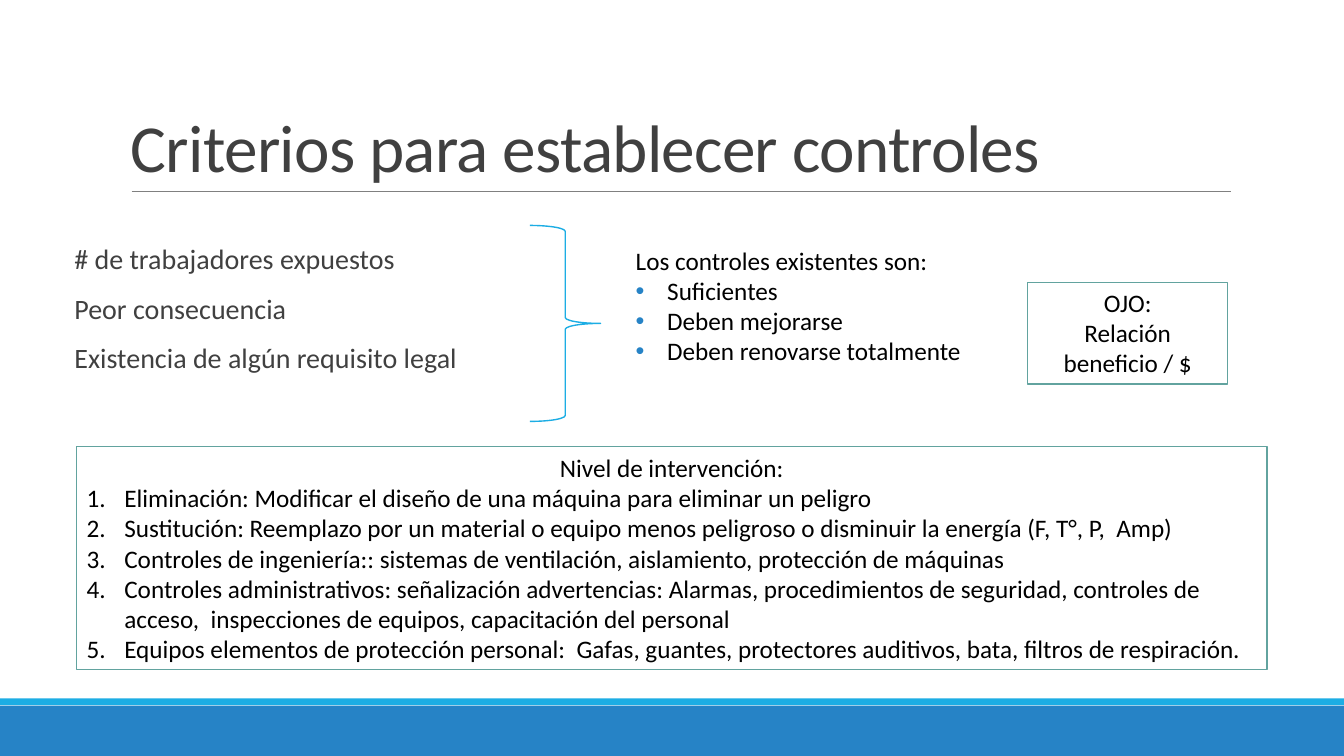
from lxml.etree import SubElement
from pptx import Presentation
from pptx.dml.color import RGBColor
from pptx.enum.shapes import MSO_CONNECTOR, MSO_SHAPE
from pptx.enum.text import MSO_ANCHOR, PP_ALIGN
from pptx.oxml.ns import qn
from pptx.util import Pt

FONT = "Calibri"
BLACK = RGBColor(0x00, 0x00, 0x00)
WHITE = RGBColor(0xFF, 0xFF, 0xFF)
DARK = RGBColor(0x40, 0x40, 0x40)
GRAY = RGBColor(0x80, 0x80, 0x80)
BLUE = RGBColor(0x26, 0x83, 0xC6)
CYAN = RGBColor(0x1C, 0xAD, 0xE4)
TEAL = RGBColor(0x62, 0xA3, 0x9F)

CRITERIA = [
    "# de trabajadores expuestos",
    "Peor consecuencia",
    "Existencia de algún requisito legal",
]
CONTROL_STATES = ["Suficientes", "Deben mejorarse", "Deben renovarse totalmente"]
INTERVENTION_LEVELS = [
    "Eliminación: Modificar el diseño de una máquina para eliminar un peligro",
    "Sustitución: Reemplazo por un material o equipo menos peligroso o "
    "disminuir la energía (F, T°, P,  Amp)",
    "Controles de ingeniería:: sistemas de ventilación, aislamiento, "
    "protección de máquinas",
    "Controles administrativos: señalización advertencias: Alarmas, "
    "procedimientos de seguridad, controles de acceso,  inspecciones de "
    "equipos, capacitación del personal",
    "Equipos elementos de protección personal:  Gafas, guantes, protectores "
    "auditivos, bata, filtros de respiración.",
]


def add_shape(s, kind, box, fill=None, line=None, width=1):
    sp = s.shapes.add_shape(kind, *map(Pt, box))
    sp.shadow.inherit = False
    if fill is None:
        sp.fill.background()
    else:
        sp.fill.solid()
        sp.fill.fore_color.rgb = fill
    if line is None:
        sp.line.fill.background()
    else:
        sp.line.color.rgb = line
        sp.line.width = Pt(width)
    return sp


def add_rule(s, x1, x2, y):
    cx = s.shapes.add_connector(MSO_CONNECTOR.STRAIGHT, Pt(x1), Pt(y), Pt(x2), Pt(y))
    cx.line.color.rgb = GRAY
    cx.line.width = Pt(0.5)
    SubElement(cx._element.spPr, qn("a:effectLst"))


def add_text_frame(s, box, wrap=True):
    tf = s.shapes.add_textbox(*map(Pt, box)).text_frame
    tf.word_wrap = wrap
    return tf


def add_paragraph(tf, text, size=18, color=BLACK, align=PP_ALIGN.LEFT):
    """Fill the empty first paragraph, or append a new one."""
    first = tf.paragraphs[0]
    p = tf.add_paragraph() if first.runs else first
    p.alignment = align
    r = p.add_run()
    r.text = text
    r.font.name = FONT
    r.font.size = Pt(size)
    r.font.color.rgb = color
    return p


def set_hanging(p, indent):
    pPr = p._p.get_or_add_pPr()
    pPr.set("marL", str(Pt(indent)))
    pPr.set("indent", str(-Pt(indent)))
    return pPr


def add_bullet(tf, text):
    pPr = set_hanging(add_paragraph(tf, text), 22.5)
    SubElement(SubElement(pPr, qn("a:buClr")), qn("a:srgbClr"), val=str(BLUE))
    SubElement(pPr, qn("a:buFont"), typeface="Arial")
    SubElement(pPr, qn("a:buChar"), char="•")


def add_numbered(tf, text):
    pPr = set_hanging(add_paragraph(tf, text), 27)
    SubElement(pPr, qn("a:buFont"), typeface="+mj-lt")
    SubElement(pPr, qn("a:buAutoNum"), type="arabicPeriod")


def add_title(s, text):
    tf = add_text_frame(s, (86.4, 22.5, 792, 114.25))
    tf.vertical_anchor = MSO_ANCHOR.BOTTOM
    p = add_paragraph(tf, text, 48, DARK)
    p.line_spacing = 0.85
    p.runs[0].font._element.set("spc", "-50")


def add_criteria(s):
    tf = add_text_frame(s, (46, 171.5, 868, 111))
    for i, text in enumerate(CRITERIA):
        p = add_paragraph(tf, text, 20, DARK)
        p.line_spacing = 0.9
        p.space_after = Pt(2)
        if i:
            p.space_before = Pt(12)


def add_control_states(s):
    tf = add_text_frame(s, (447, 171.5, 250, 94.5), wrap=False)
    add_paragraph(tf, "Los controles existentes son:")
    for text in CONTROL_STATES:
        add_bullet(tf, text)


def add_cost_note(s):
    tf = add_shape(s, MSO_SHAPE.RECTANGLE, (734, 201.6, 143, 72.7),
                   line=TEAL, width=0.75).text_frame
    tf.word_wrap = True
    tf.vertical_anchor = MSO_ANCHOR.TOP
    for text in ("OJO:", "Relación beneficio / $"):
        add_paragraph(tf, text, align=PP_ALIGN.CENTER)


def add_intervention_levels(s):
    tf = add_shape(s, MSO_SHAPE.RECTANGLE, (54.7, 319, 850.3, 159.3),
                   WHITE, TEAL, 1.25).text_frame
    tf.word_wrap = True
    tf.vertical_anchor = MSO_ANCHOR.MIDDLE
    add_paragraph(tf, "Nivel de intervención:", align=PP_ALIGN.CENTER)
    for text in INTERVENTION_LEVELS:
        add_numbered(tf, text)


def main():
    prs = Presentation()
    prs.slide_width, prs.slide_height = Pt(960), Pt(540)
    s = prs.slides.add_slide(prs.slide_layouts[6])
    add_shape(s, MSO_SHAPE.RECTANGLE, (0, 504, 960, 36), BLUE)
    add_shape(s, MSO_SHAPE.RECTANGLE, (0, 498.8, 960, 5), CYAN)
    add_rule(s, 94, 879, 136.8)
    add_title(s, "Criterios para establecer controles")
    add_criteria(s)
    add_intervention_levels(s)
    add_shape(s, MSO_SHAPE.RIGHT_BRACE, (378.5, 161, 50.5, 140), line=CYAN)
    add_control_states(s)
    add_cost_note(s)
    prs.save("out.pptx")


if __name__ == "__main__":
    main()
